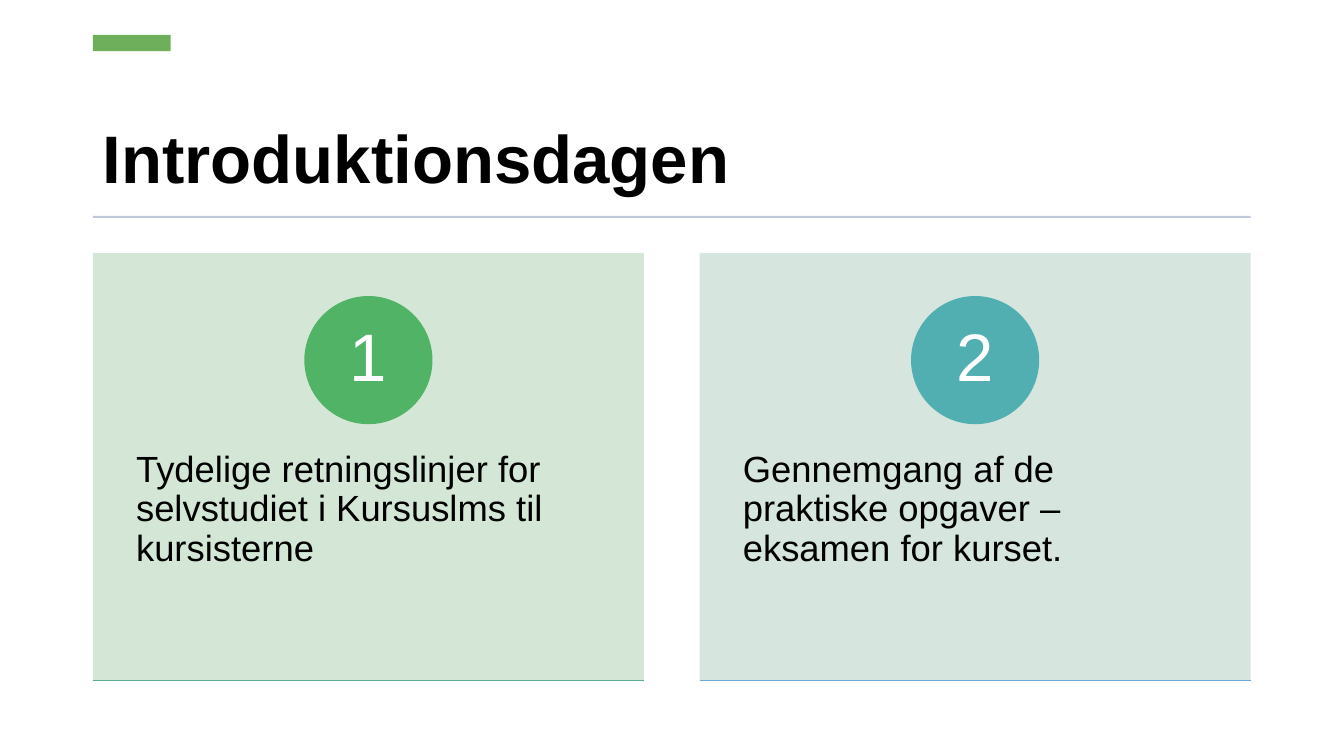
from dataclasses import dataclass

from lxml.etree import SubElement
from pptx import Presentation
from pptx.dml.color import RGBColor
from pptx.enum.shapes import MSO_CONNECTOR, MSO_SHAPE
from pptx.enum.text import MSO_ANCHOR, MSO_AUTO_SIZE, PP_ALIGN
from pptx.oxml.ns import qn
from pptx.util import Cm, Pt


@dataclass(frozen=True)
class Theme:
    """Colours, type sizes and the shared page measures."""
    font: str = "Arial"
    ink: str = "000000"
    light: str = "FFFFFF"
    accent: str = "6DAF5B"
    rule: str = "BDC9DB"
    display_size: int = 48
    body_size: int = 26
    left: float = 2.34
    width: float = 29.18
    card_gap: float = 1.4
    card_top: float = 6.38
    card_height: float = 10.77
    circle_size: float = 3.23


@dataclass(frozen=True)
class Card:
    """Wording and colours of one numbered card."""
    text: str
    panel: str
    circle: str
    edge: str


THEME = Theme()
CARDS = [
    Card("Tydelige retningslinjer for selvstudiet i Kursuslms til kursisterne",
         "D0E5D3", "51B365", "5BAF8F"),
    Card("Gennemgang af de praktiske opgaver – eksamen for kurset.",
         "D2E3DB", "51AFB2", "6BA7D9"),
]


def write_text(shape, text, size, color, anchor, align=PP_ALIGN.LEFT,
               bold=False, inset=(0.25, 0.13)):
    """Set the text of a shape with its type, anchor and insets."""
    frame = shape.text_frame
    frame.text = text
    frame.word_wrap = True
    frame.auto_size = MSO_AUTO_SIZE.NONE
    frame.vertical_anchor = anchor
    frame.margin_left = frame.margin_right = Cm(inset[0])
    frame.margin_top = frame.margin_bottom = Cm(inset[1])
    para = frame.paragraphs[0]
    para.alignment = align
    para.line_spacing = 0.9
    font = para.runs[0].font
    font.name = THEME.font
    font.size = Pt(size)
    font.bold = bold
    font.color.rgb = RGBColor.from_string(color)


def add_block(page, kind, left, top, width, height, color, opacity=100):
    """Add a plain filled shape and return it."""
    block = page.shapes.add_shape(kind, Cm(left), Cm(top), Cm(width), Cm(height))
    block.shadow.inherit = False
    block.fill.solid()
    block.fill.fore_color.rgb = RGBColor.from_string(color)
    block.line.fill.background()
    if opacity < 100:
        for tint in block.fill._xPr.iter(qn("a:srgbClr")):
            SubElement(tint, qn("a:alpha")).set("val", str(opacity * 1000))
    return block


def add_edge(page, left, top, width, color):
    """Add a thin horizontal line."""
    edge = page.shapes.add_connector(
        MSO_CONNECTOR.STRAIGHT, Cm(left), Cm(top), Cm(left + width), Cm(top))
    edge.line.color.rgb = RGBColor.from_string(color)
    edge.line.width = Pt(1)
    SubElement(edge._element.spPr, qn("a:effectLst"))


def add_title(page, text):
    """Fill and place the title placeholder."""
    title = page.shapes.title
    title.left, title.top = Cm(THEME.left), Cm(1.9)
    title.width, title.height = Cm(THEME.width), Cm(3.23)
    write_text(title, text, THEME.display_size, THEME.ink, MSO_ANCHOR.BOTTOM, bold=True)


def add_card(page, card, number, left, width):
    """Add a panel with a numbered circle, a text and a bottom edge."""
    add_block(page, MSO_SHAPE.RECTANGLE, left, THEME.card_top, width,
              THEME.card_height, card.panel, opacity=90)
    box = page.shapes.add_textbox(
        Cm(left), Cm(THEME.card_top + 4.08), Cm(width), Cm(6.45))
    write_text(box, card.text, THEME.body_size, THEME.ink, MSO_ANCHOR.TOP,
               inset=(1.09, 0.91))
    size = THEME.circle_size
    circle = add_block(page, MSO_SHAPE.OVAL, left + (width - size) / 2,
                       THEME.card_top + 1.08, size, size, card.circle)
    write_text(circle, str(number), THEME.display_size, THEME.light,
               MSO_ANCHOR.MIDDLE, PP_ALIGN.CENTER, inset=(0.25, 0.03))
    add_edge(page, left, THEME.card_top + THEME.card_height, width, card.edge)


def main():
    """Build the slide and save the deck."""
    deck = Presentation()
    deck.slide_width, deck.slide_height = Cm(33.87), Cm(19.05)
    page = deck.slides.add_slide(deck.slide_layouts[5])
    add_title(page, "Introduktionsdagen")
    add_block(page, MSO_SHAPE.RECTANGLE, THEME.left, 0.88, 1.96, 0.41, THEME.accent)
    add_block(page, MSO_SHAPE.RECTANGLE, THEME.left, 5.44, THEME.width, 0.05, THEME.rule)
    width = (THEME.width - THEME.card_gap * (len(CARDS) - 1)) / len(CARDS)
    for index, card in enumerate(CARDS):
        left = THEME.left + index * (width + THEME.card_gap)
        add_card(page, card, index + 1, left, width)
    deck.save("out.pptx")


if __name__ == "__main__":
    main()
